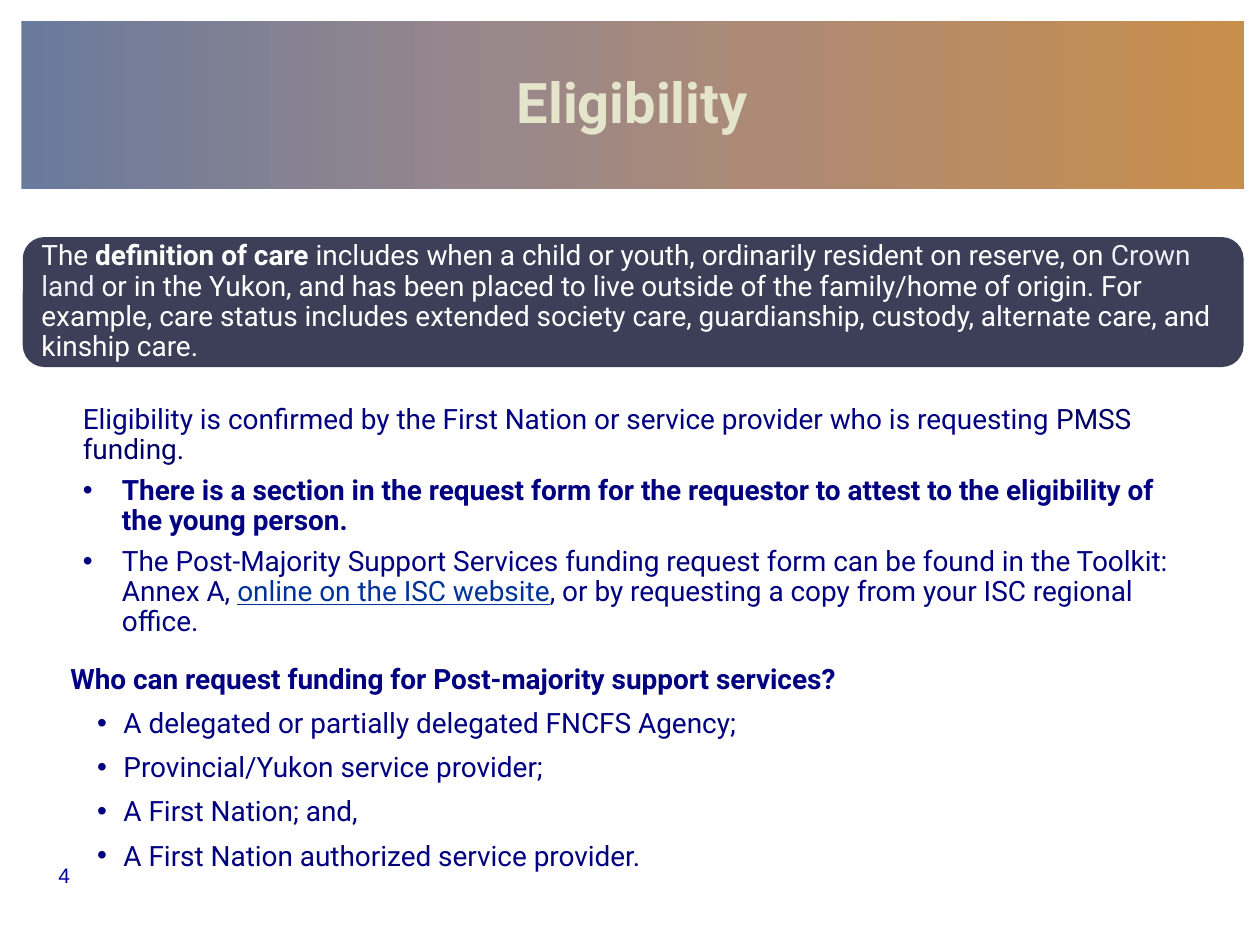
from copy import deepcopy
from dataclasses import dataclass

from lxml import etree
from pptx import Presentation
from pptx import util as u
from pptx.dml.color import RGBColor
from pptx.enum import shapes, text
from pptx.oxml.ns import qn


@dataclass(frozen=True)
class Theme:
    font: str = "Roboto"
    number_font: str = "Arial"
    title_size: int = 32
    body_size: int = 16
    number_size: int = 12
    title: str = "E5E5CC"
    body: str = "000080"
    acronym: str = "000066"
    link: str = "003399"
    number: str = "0000A3"
    panel: str = "3D3F58"
    panel_text: str = "FFFFFF"
    panel_accent: str = "EEEEF6"
    banner: tuple = ((0, "6A7A9C"), (39, "99888B"), (62, "AE8A74"), (100, "C88E4B"))


THEME = Theme()


@dataclass(frozen=True)
class Area:
    left: float
    top: float
    width: float
    height: float

    def lengths(self) -> tuple:
        return tuple(u.Cm(v) for v in (self.left, self.top, self.width, self.height))


@dataclass(frozen=True)
class Span:
    words: str
    color: str | None = None
    bold: bool | None = None
    underline: bool | None = None


@dataclass(frozen=True)
class Para:
    spans: tuple[Span, ...]
    color: str = THEME.body
    bold: bool = False
    size: int = THEME.body_size
    font: str = THEME.font
    centered: bool = False
    line: float = 0.9
    after: float = 6
    margin: float = 0
    hanging: float = 0


def set_bullet(paragraph, margin: float, hanging: float) -> None:
    properties = paragraph._p.get_or_add_pPr()
    properties.set("marL", str(u.Cm(margin)))
    properties.set("indent", str(-u.Cm(hanging)))
    etree.SubElement(properties, qn("a:buFont")).set("typeface", "Arial")
    etree.SubElement(properties, qn("a:buChar")).set("char", "•")


def write(frame, paras: list[Para]) -> None:
    frame.word_wrap = True
    for index, para in enumerate(paras):
        paragraph = frame.paragraphs[0] if index == 0 else frame.add_paragraph()
        paragraph.alignment = text.PP_ALIGN.CENTER if para.centered else text.PP_ALIGN.LEFT
        paragraph.line_spacing = para.line
        paragraph.space_after = u.Pt(para.after)
        if para.hanging:
            set_bullet(paragraph, para.margin, para.hanging)
        font = paragraph.font
        font.name, font.size, font.bold = para.font, u.Pt(para.size), para.bold
        font.color.rgb = RGBColor.from_string(para.color)
        for span in para.spans:
            run = paragraph.add_run()
            run.text = span.words
            run.font.bold = span.bold
            run.font.underline = span.underline
            if span.color:
                run.font.color.rgb = RGBColor.from_string(span.color)


def add_text(slide, area: Area, paras: list[Para], inset: bool = True) -> None:
    frame = slide.shapes.add_textbox(*area.lengths()).text_frame
    if not inset:
        frame.margin_left = frame.margin_top = frame.margin_right = frame.margin_bottom = 0
    write(frame, paras)


def add_panel(slide, kind, area: Area, paras: list[Para]):
    panel = slide.shapes.add_shape(kind, *area.lengths())
    panel.shadow.inherit = False
    panel.line.fill.background()
    panel.text_frame.vertical_anchor = text.MSO_ANCHOR.MIDDLE
    write(panel.text_frame, paras)
    return panel


def fill_gradient(fill, stops: tuple) -> None:
    fill.gradient()
    fill.gradient_angle = 0
    first = fill.gradient_stops[0]._gs
    for _ in range(len(stops) - len(fill.gradient_stops)):
        first.addnext(deepcopy(first))
    for stop, (percent, color) in zip(fill.gradient_stops, stops):
        stop.position = percent / 100
        stop.color.rgb = RGBColor.from_string(color)


def main() -> None:
    deck = Presentation()
    deck.slide_width, deck.slide_height = u.Cm(25.4), u.Cm(19.05)
    slide = deck.slides.add_slide(deck.slide_layouts[6])

    add_text(slide, Area(0.1, 17.32, 2.39, 0.76), [
        Para((Span("4"),), THEME.number, size=THEME.number_size,
             font=THEME.number_font, centered=True)])

    banner = add_panel(slide, shapes.MSO_SHAPE.RECTANGLE, Area(0.43, 0.43, 24.64, 3.38), [
        Para((Span("Eligibility"),), THEME.title, True, THEME.title_size,
             centered=True, after=0)])
    fill_gradient(banner.fill, THEME.banner)

    add_text(slide, Area(1.42, 8.05, 22.66, 6.6), [
        Para((
            Span("Eligibility is confirmed by the First Nation or service provider "
                 "who is requesting "),
            Span("PMSS funding.", THEME.acronym))),
        Para((Span("There is a section in the request form for the requestor to attest "
                   "to the eligibility of the young person."),),
             bold=True, margin=0.79, hanging=0.79),
        Para((
            Span("The Post-Majority Support Services funding request form can be found "
                 "in the Toolkit: Annex A, "),
            Span("online on the ISC website", THEME.link, underline=True),
            Span(", or by requesting a copy from your ISC regional office.")),
            margin=0.79, hanging=0.79)])

    definition = add_panel(
        slide, shapes.MSO_SHAPE.ROUNDED_RECTANGLE, Area(0.46, 4.78, 24.61, 2.62), [
            Para((
                Span("The "),
                Span("definition of care ", bold=True),
                Span("includes when a child or youth, ordinarily resident on reserve, on "),
                Span("Crown land ", THEME.panel_accent),
                Span("or in the Yukon, and has been placed to live outside of the "
                     "family/home of origin. For example, care status includes extended "
                     "society care, guardianship, custody, alternate care, and kinship "
                     "care.")),
                THEME.panel_text, after=0)])
    definition.fill.solid()
    definition.fill.fore_color.rgb = RGBColor.from_string(THEME.panel)

    requesters = (
        "A delegated or partially delegated FNCFS Agency;",
        "Provincial/Yukon service provider;",
        "A First Nation; and,",
        "A First Nation authorized service provider.",
    )
    question = Para((Span("Who can request funding for Post-majority support services?"),),
                    bold=True, line=1)
    answers = [Para((Span(name),), line=1, margin=1.07, hanging=0.53) for name in requesters]
    add_text(slide, Area(1.42, 13.34, 22.66, 4.88), [question, *answers], inset=False)

    deck.save("out.pptx")


if __name__ == "__main__":
    main()
